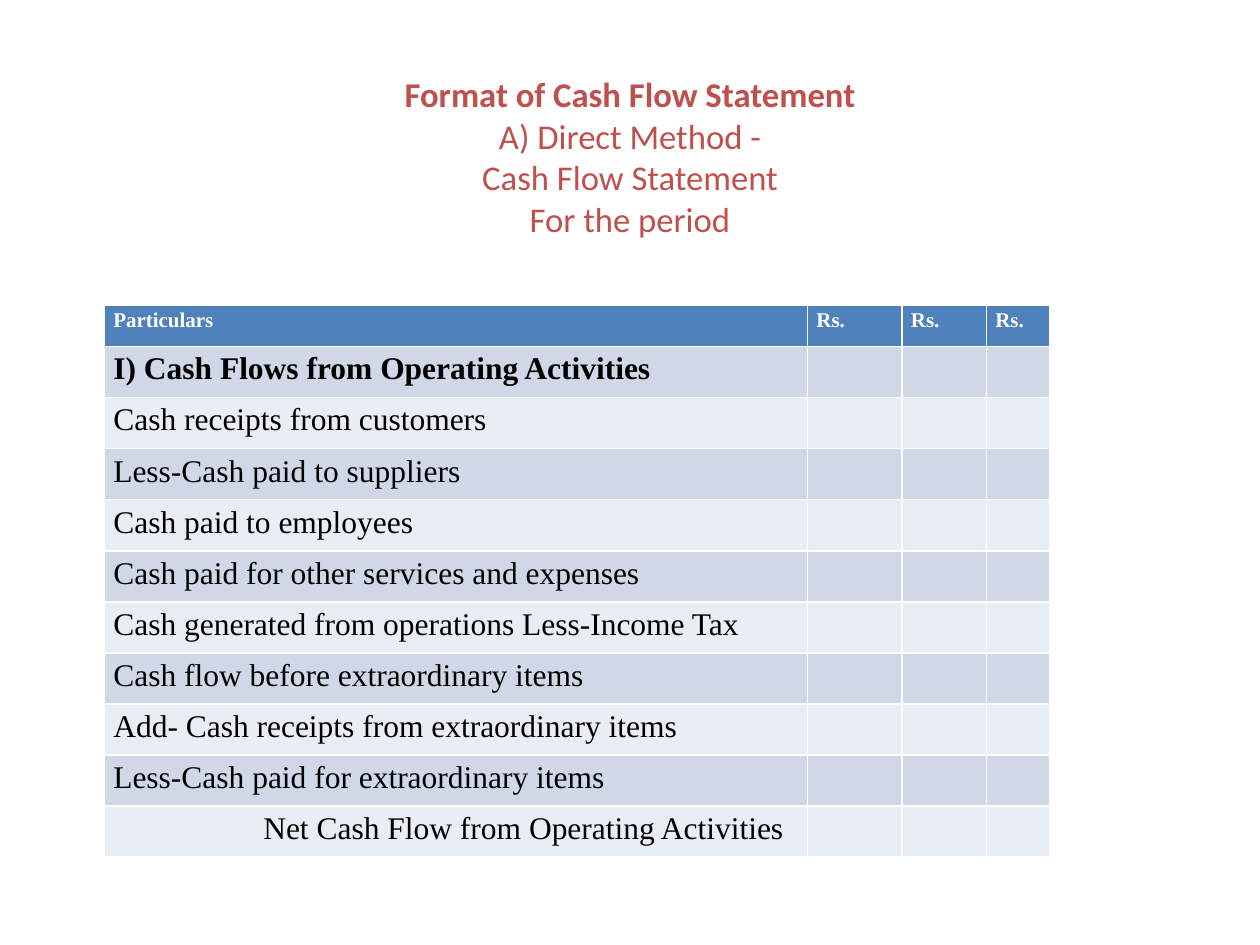
from dataclasses import dataclass

from pptx import Presentation
from pptx.dml.color import RGBColor as Rgb
from pptx.enum.text import MSO_ANCHOR as Anchor
from pptx.enum.text import MSO_AUTO_SIZE as Fit
from pptx.enum.text import PP_ALIGN as Align
from pptx.util import Inches, Pt


@dataclass(frozen=True)
class Theme:
    red: str = "C0504D"
    blue: str = "4F81BD"
    white: str = "FFFFFF"
    black: str = "000000"
    bands: tuple = ("D0D8E8", "E9EDF4")
    sans: str = "Calibri"
    serif: str = "Times New Roman"
    title: float = 19.8
    head: float = 12
    body: float = 18


def write(par, text, font, size, color, bold=False):
    run = par.add_run()
    run.text = text
    style = run.font
    style.name, style.size, style.bold = font, Pt(size), bold
    style.color.rgb = Rgb.from_string(color)


class Deck:
    """Holds the theme and the current slide; boxes are shares of its size."""

    def __init__(self, theme, wide, high):
        self.theme = theme
        self.file = Presentation()
        self.file.slide_width = Inches(wide)
        self.file.slide_height = Inches(high)
        self.slide = self.file.slides.add_slide(self.file.slide_layouts[5])

    def scale(self, left, top, wide, high):
        w, h = self.file.slide_width, self.file.slide_height
        return [int(n) for n in (left * w, top * h, wide * w, high * h)]

    def title(self, lines, box):
        """Draw the lines in one centred paragraph, the first one bold."""
        t, shape = self.theme, self.slide.shapes.title
        shape.left, shape.top, shape.width, shape.height = self.scale(*box)
        frame = shape.text_frame
        frame.auto_size, frame.word_wrap = Fit.NONE, True
        frame.vertical_anchor = Anchor.MIDDLE
        par = frame.paragraphs[0]
        par.alignment = Align.CENTER
        for i, line in enumerate(lines):
            if i:
                par.add_line_break()
            write(par, line, t.sans, t.title, t.red, bold=i == 0)

    def table(self, rows, box, cols, first):
        """Draw rows; cols are shares of the width, first is the head's share of the height."""
        left, top, wide, high = self.scale(*box)
        grid = self.slide.shapes.add_table(
            len(rows), len(cols), left, top, wide, high).table
        for col, part in zip(grid.columns, cols):
            col.width = int(wide * part / sum(cols))
        rest = (1 - first) / (len(rows) - 1)
        for r, row in enumerate(rows):
            grid.rows[r].height = int(high * (rest if r else first))
            for c, text in enumerate(row):
                self.cell(grid.cell(r, c), text, r)

    def cell(self, cell, text, row):
        t = self.theme
        cell.margin_left = cell.margin_right = Inches(0.07)
        cell.margin_top = cell.margin_bottom = 0
        cell.fill.solid()
        fill = t.bands[(row - 1) % 2] if row else t.blue
        cell.fill.fore_color.rgb = Rgb.from_string(fill)
        par = cell.text_frame.paragraphs[0]
        par.line_spacing = 1.15
        if text:
            size, color = (t.body, t.black) if row else (t.head, t.white)
            write(par, text, t.serif, size, color, bold=row < 2)
            if text.startswith("Net"):
                cell.margin_left = Inches(1.26)

    def save(self):
        self.file.save("out.pptx")


TITLE = ("Format of Cash Flow Statement", "A) Direct Method -",
         "Cash Flow Statement", "For the period")
ITEMS = (
    "I) Cash Flows from Operating Activities",
    "Cash receipts from customers",
    "Less-Cash paid to suppliers",
    "Cash paid to employees",
    "Cash paid for other services and expenses",
    "Cash generated from operations Less-Income Tax",
    "Cash flow before extraordinary items",
    "Add- Cash receipts from extraordinary items",
    "Less-Cash paid for extraordinary items",
    "Net Cash Flow from Operating Activities",
)


def main():
    deck = Deck(Theme(), 10, 7.5)
    deck.title(TITLE, (0.075, 0.07, 0.85, 0.19))
    rows = [("Particulars", "Rs.", "Rs.", "Rs.")]
    rows += [(item, "", "", "") for item in ITEMS]
    deck.table(rows, (0.083, 0.323, 0.75, 0.584),
               cols=(5.58, 0.75, 0.67, 0.5), first=0.075)
    deck.save()


if __name__ == "__main__":
    main()
